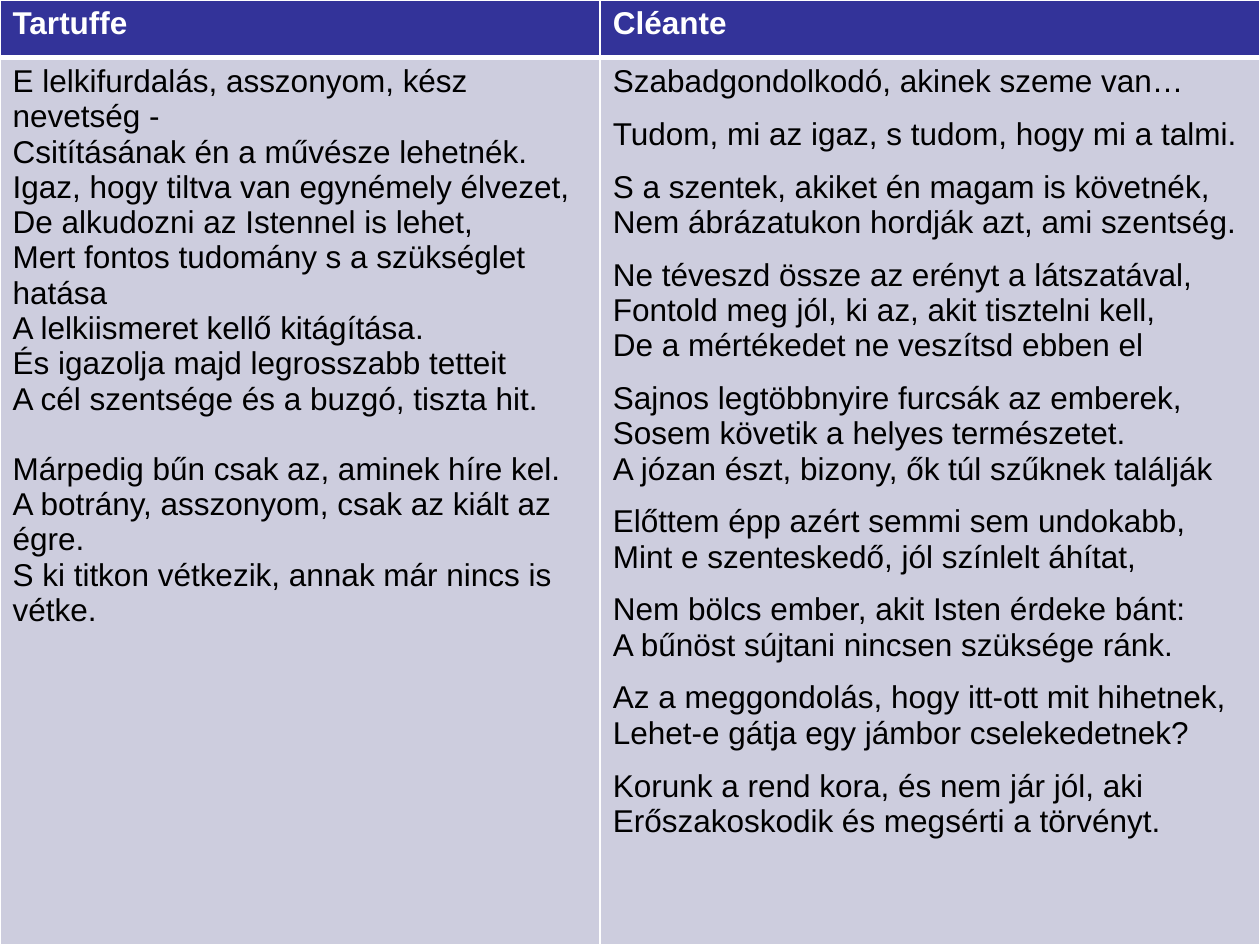
from copy import deepcopy
from dataclasses import dataclass

from lxml import etree
from pptx import Presentation
from pptx.dml.color import RGBColor
from pptx.oxml.ns import qn
from pptx.slide import Slide
from pptx.table import _Cell
from pptx.util import Pt

SLIDE_WIDTH, SLIDE_HEIGHT = 720, 540
COLUMN_WIDTHS = (343, 377)
ROW_HEIGHTS = (33, 507)
FONT_NAME, FONT_SIZE = "Arial", 18
THIN, THICK = 1, 3
WHITE = "FFFFFF"
BACKGROUND_STOPS = ((0, "FFEFD1"), (0.65, "F0EBD5"), (1, "D1C39F"))


@dataclass(frozen=True)
class CellStyle:
    fill: str
    text: str
    bold: bool
    top_border: float
    bottom_border: float


@dataclass(frozen=True)
class Speech:
    speaker: str
    stanzas: tuple[str, ...]
    stanza_gap: float


HEADER = CellStyle("333399", WHITE, True, THIN, THICK)
BODY = CellStyle("CDCDDE", "000000", False, THICK, THIN)

SPEECHES = (
    Speech("Tartuffe", (
        "E lelkifurdalás, asszonyom, kész nevetség -\n"
        "Csitításának én a művésze lehetnék.\n"
        "Igaz, hogy tiltva van egynémely élvezet,\n"
        "De alkudozni az Istennel is lehet,\n"
        "Mert fontos tudomány s a szükséglet hatása\n"
        "A lelkiismeret kellő kitágítása.\n"
        "És igazolja majd legrosszabb tetteit\n"
        "A cél szentsége és a buzgó, tiszta hit.",
        "Márpedig bűn csak az, aminek híre kel.\n"
        "A botrány, asszonyom, csak az kiált az égre.\n"
        "S ki titkon vétkezik, annak már nincs is vétke.",
    ), 20),
    Speech("Cléante", (
        "Szabadgondolkodó, akinek szeme van…",
        "Tudom, mi az igaz, s tudom, hogy mi a talmi.",
        "S a szentek, akiket én magam is követnék,\n"
        "Nem ábrázatukon hordják azt, ami szentség.",
        "Ne téveszd össze az erényt a látszatával,\n"
        "Fontold meg jól, ki az, akit tisztelni kell,\n"
        "De a mértékedet ne veszítsd ebben el",
        "Sajnos legtöbbnyire furcsák az emberek,\n"
        "Sosem követik a helyes természetet.\n"
        "A józan észt, bizony, ők túl szűknek találják",
        "Előttem épp azért semmi sem undokabb,\n"
        "Mint e szenteskedő, jól színlelt áhítat,",
        "Nem bölcs ember, akit Isten érdeke bánt:\n"
        "A bűnöst sújtani nincsen szüksége ránk.",
        "Az a meggondolás, hogy itt-ott mit hihetnek,\n"
        "Lehet-e gátja egy jámbor cselekedetnek?",
        "Korunk a rend kora, és nem jár jól, aki\n"
        "Erőszakoskodik és megsérti a törvényt.",
    ), 10),
)


def color(value: str) -> RGBColor:
    return RGBColor.from_string(value)


def paint_background(slide: Slide) -> None:
    fill = slide.background.fill
    fill.gradient()
    fill.gradient_angle = 270
    stop_list = next(slide.element.iter(qn("a:gsLst")))
    stop_list.append(deepcopy(stop_list[0]))
    for stop, (position, value) in zip(fill.gradient_stops, BACKGROUND_STOPS):
        stop.position = position
        stop.color.rgb = color(value)


def draw_borders(cell: _Cell, style: CellStyle) -> None:
    properties = cell._tc.get_or_add_tcPr()
    widths = {"L": THIN, "R": THIN, "T": style.top_border, "B": style.bottom_border}
    for side, width in widths.items():
        line = etree.SubElement(properties, qn(f"a:ln{side}"), w=str(Pt(width)))
        solid = etree.SubElement(line, qn("a:solidFill"))
        etree.SubElement(solid, qn("a:srgbClr"), val=WHITE)


def fill_cell(cell: _Cell, stanzas: tuple[str, ...], style: CellStyle, gap: float = 0) -> None:
    draw_borders(cell, style)
    cell.fill.solid()
    cell.fill.fore_color.rgb = color(style.fill)
    frame = cell.text_frame
    for index, stanza in enumerate(stanzas):
        paragraph = frame.add_paragraph() if index else frame.paragraphs[0]
        paragraph.text = stanza
        paragraph.space_after = Pt(gap)
        paragraph.font.name = FONT_NAME
        paragraph.font.size = Pt(FONT_SIZE)
        paragraph.font.bold = style.bold
        paragraph.font.color.rgb = color(style.text)


def add_speech_table(slide: Slide) -> None:
    table = slide.shapes.add_table(
        len(ROW_HEIGHTS), len(SPEECHES), Pt(0), Pt(0), Pt(SLIDE_WIDTH), Pt(SLIDE_HEIGHT)
    ).table
    for row, height in zip(table.rows, ROW_HEIGHTS):
        row.height = Pt(height)
    for index, (speech, width) in enumerate(zip(SPEECHES, COLUMN_WIDTHS)):
        table.columns[index].width = Pt(width)
        fill_cell(table.cell(0, index), (speech.speaker,), HEADER)
        fill_cell(table.cell(1, index), speech.stanzas, BODY, speech.stanza_gap)


def main() -> None:
    presentation = Presentation()
    presentation.slide_width = Pt(SLIDE_WIDTH)
    presentation.slide_height = Pt(SLIDE_HEIGHT)
    slide = presentation.slides.add_slide(presentation.slide_layouts[6])
    paint_background(slide)
    add_speech_table(slide)
    presentation.save("out.pptx")


if __name__ == "__main__":
    main()
